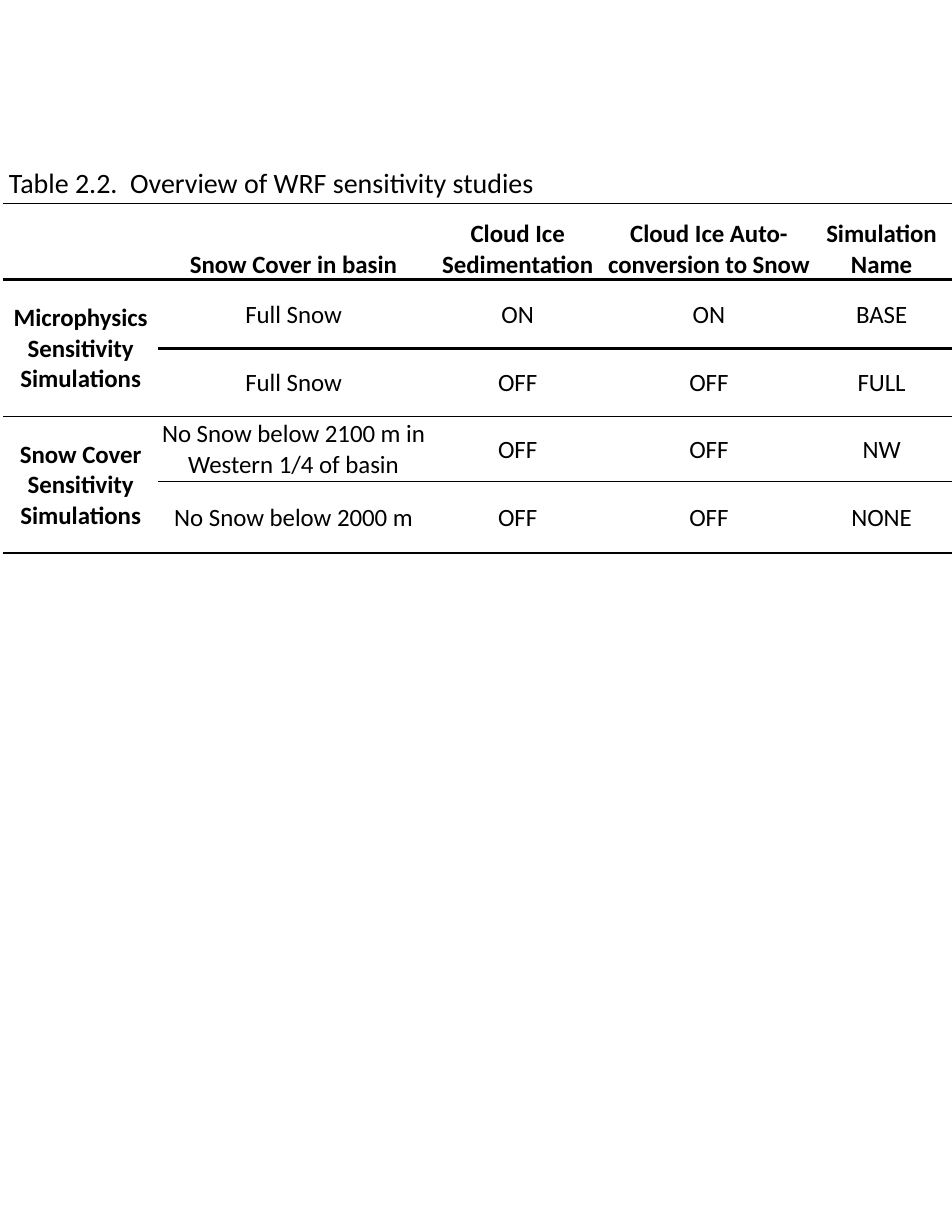
from lxml import etree
from pptx import Presentation
from pptx.dml.color import RGBColor
from pptx.enum import text
from pptx.oxml import ns
from pptx.util import Pt

COLORS = {"ink": "000000"}
FONT = "Calibri"
PLAIN_TABLE_STYLE = "{2D5ABB26-0587-4C30-8999-92F81FD0307C}"
THIN, THICK = 1, 2.25

COLUMN_WIDTHS = [99.4, 174.3, 113.9, 132, 90]
ROW_HEIGHTS = [49, 43.9, 43.9, 41.8, 46]
STUDIES = [
    ["", "Snow Cover in basin", "Cloud Ice Sedimentation",
     "Cloud Ice Auto-conversion to Snow", "Simulation Name"],
    ["Microphysics Sensitivity Simulations", "Full Snow", "ON", "ON", "BASE"],
    ["", "Full Snow", "OFF", "OFF", "FULL"],
    ["Snow Cover Sensitivity Simulations",
     "No Snow below 2100 m in Western 1/4 of basin", "OFF", "OFF", "NW"],
    ["", "No Snow below 2000 m", "OFF", "OFF", "NONE"],
]
GROUP_STARTS = [1, 3]  # each group label spans two rows


def style_font(paragraph, size, bold=False):
    font = paragraph.font
    font.name, font.size, font.bold = FONT, Pt(size), bold
    font.color.rgb = RGBColor.from_string(COLORS["ink"])


def add_caption(slide, wording):
    caption = slide.shapes.add_textbox(Pt(-2.2), Pt(102.2), Pt(613.4), Pt(30.2))
    frame = caption.text_frame
    frame.word_wrap = True
    frame.margin_left = frame.margin_right = Pt(7.9)
    frame.margin_top = frame.margin_bottom = Pt(4)
    frame.text = wording
    style_font(frame.paragraphs[0], 18)


def add_rule(cell, side, width):
    """Draw a border on one side of a cell: 'T' for top, 'B' for bottom."""
    properties = cell._tc.get_or_add_tcPr()
    line = etree.SubElement(properties, ns.qn(f"a:ln{side}"), w=str(Pt(width)))
    fill = etree.SubElement(line, ns.qn("a:solidFill"))
    etree.SubElement(fill, ns.qn("a:srgbClr"), val=COLORS["ink"])


def bottom_width(row, column):
    if row == 0 or (row == 1 and column > 0):
        return THICK
    return THIN


def fill_cell(cell, wording, row, column):
    # Rules come before the fill in the cell properties
    if row == 0:
        add_rule(cell, "T", THIN)
    add_rule(cell, "B", bottom_width(row, column))
    cell.fill.background()

    cell.margin_left = cell.margin_right = cell.margin_top = Pt(0.7)
    cell.margin_bottom = Pt(0)
    anchors = text.MSO_ANCHOR
    cell.vertical_anchor = anchors.BOTTOM if row == 0 else anchors.MIDDLE
    cell.text = wording
    paragraph = cell.text_frame.paragraphs[0]
    paragraph.alignment = text.PP_ALIGN.CENTER
    style_font(paragraph, 16, bold=row == 0 or column == 0)


def add_studies_table(slide):
    table = slide.shapes.add_table(
        len(ROW_HEIGHTS), len(COLUMN_WIDTHS), Pt(2.2), Pt(131),
        Pt(sum(COLUMN_WIDTHS)), Pt(sum(ROW_HEIGHTS))).table
    table.first_row = table.horz_banding = False
    table._tbl.tblPr.find(ns.qn("a:tableStyleId")).text = PLAIN_TABLE_STYLE

    for column, width in zip(table.columns, COLUMN_WIDTHS):
        column.width = Pt(width)
    for row, height in zip(table.rows, ROW_HEIGHTS):
        row.height = Pt(height)

    for start in GROUP_STARTS:
        table.cell(start, 0).merge(table.cell(start + 1, 0))
    for row, entries in enumerate(STUDIES):
        for column, wording in enumerate(entries):
            fill_cell(table.cell(row, column), wording, row, column)


def main():
    deck = Presentation()
    deck.slide_width, deck.slide_height = Pt(612), Pt(792)
    slide = deck.slides.add_slide(deck.slide_layouts[6])

    # Caption above the table
    add_caption(slide, "Table 2.2.  Overview of WRF sensitivity studies")
    # Overview of the simulations
    add_studies_table(slide)

    deck.save("out.pptx")


if __name__ == "__main__":
    main()
